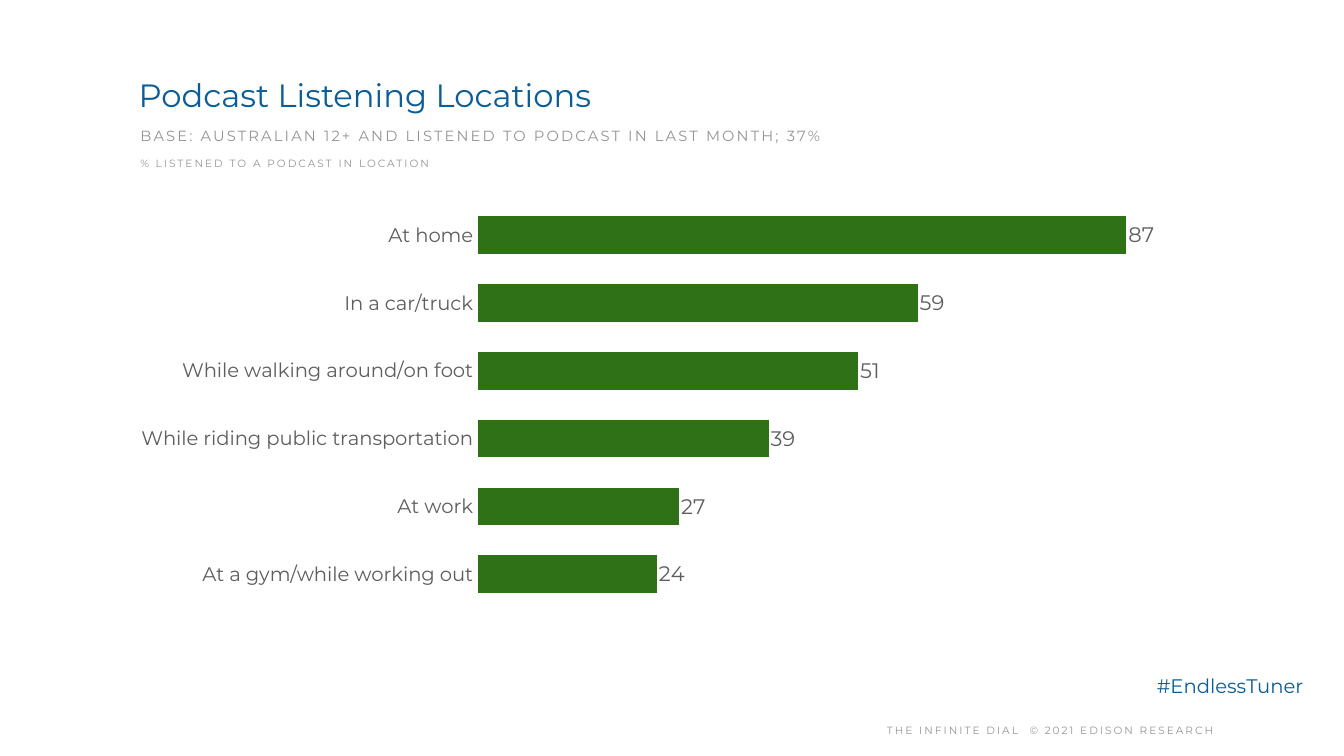
from pptx import Presentation
from pptx.chart.data import CategoryChartData
from pptx.dml.color import RGBColor
from pptx.enum.chart import XL_CHART_TYPE as ChartType
from pptx.enum.chart import XL_LABEL_POSITION as LabelPosition
from pptx.enum.chart import XL_TICK_LABEL_POSITION as TickLabelPosition
from pptx.enum.chart import XL_TICK_MARK as TickMark
from pptx.enum.text import MSO_ANCHOR as Anchor
from pptx.enum.text import PP_ALIGN as Align
from pptx.oxml import parse_xml
from pptx.oxml.ns import nsdecls
from pptx.util import Pt

FONT = "Montserrat"
BLUE = RGBColor(0x0A, 0x5D, 0x96)
GREEN = RGBColor(0x2E, 0x71, 0x16)
GRAY = RGBColor(0x95, 0x95, 0x95)
DARK_GRAY = RGBColor(0x5E, 0x5E, 0x5E)

INSET = 6
LISTENING_LOCATIONS = {
    "At home": 87,
    "In a car/truck": 59,
    "While walking around/on foot": 51,
    "While riding public transportation": 39,
    "At work": 27,
    "At a gym/while working out": 24,
}


def set_font(font, size, color):
    font.name = FONT
    font.size = Pt(size)
    font.color.rgb = color
    font.bold = False


def add_text(slide, text, box, size, color, anchor=Anchor.TOP,
             align=Align.LEFT, line_spacing=1.0, tracking=0):
    """Add a one-line text box; tracking is the letter spacing in points."""
    text_frame = slide.shapes.add_textbox(*map(Pt, box)).text_frame
    text_frame.word_wrap = True
    text_frame.vertical_anchor = anchor
    text_frame.margin_left = text_frame.margin_right = Pt(INSET)
    text_frame.margin_top = text_frame.margin_bottom = Pt(INSET)
    text_frame.text = text
    paragraph = text_frame.paragraphs[0]
    paragraph.alignment = align
    paragraph.line_spacing = line_spacing
    run = paragraph.runs[0]
    set_font(run.font, size, color)
    if tracking:
        run._r.get_or_add_rPr().set("spc", str(round(tracking * 100)))


def add_caption(slide, text, box, size, tracking, align=Align.LEFT):
    add_text(slide, text, box, size, GRAY, Anchor.MIDDLE, align, 1.2, tracking)


def set_plot_area(chart, x, y, width, height):
    """Fix the inner plot area, in fractions of the chart."""
    plot_area = chart._chartSpace.chart.plotArea
    for layout in plot_area.findall("{*}layout"):
        plot_area.remove(layout)
    plot_area.insert(0, parse_xml(
        f'<c:layout {nsdecls("c")}><c:manualLayout>'
        '<c:layoutTarget val="inner"/>'
        '<c:xMode val="edge"/><c:yMode val="edge"/>'
        f'<c:x val="{x}"/><c:y val="{y}"/>'
        f'<c:w val="{width}"/><c:h val="{height}"/>'
        '</c:manualLayout></c:layout>'))


def format_axes(chart):
    category_axis = chart.category_axis
    category_axis.reverse_order = True
    category_axis.major_tick_mark = TickMark.NONE
    category_axis.minor_tick_mark = TickMark.NONE
    category_axis.tick_label_position = TickLabelPosition.LOW
    category_axis.format.line.fill.background()
    set_font(category_axis.tick_labels.font, 28, DARK_GRAY)

    value_axis = chart.value_axis
    value_axis.minimum_scale = 0
    value_axis.maximum_scale = 100
    value_axis.major_unit = 20
    value_axis.has_major_gridlines = False
    value_axis.visible = False


def add_bar_chart(slide, values, box):
    chart_data = CategoryChartData(number_format="General")
    chart_data.categories = list(values)
    chart_data.add_series("Series 1", list(values.values()))
    chart = slide.shapes.add_chart(
        ChartType.BAR_CLUSTERED, *map(Pt, box), chart_data).chart
    chart.has_legend = False
    chart.has_title = False
    set_font(chart.font, 10, GRAY)
    format_axes(chart)

    plot = chart.plots[0]
    plot.vary_by_categories = False
    plot.gap_width = 80
    plot.overlap = -10
    series = plot.series[0]
    series.format.fill.solid()
    series.format.fill.fore_color.rgb = GREEN
    labels = series.data_labels
    labels.show_value = True
    labels.position = LabelPosition.OUTSIDE_END
    labels.number_format = "#,##0"
    labels.number_format_is_linked = False
    set_font(labels.font, 30, DARK_GRAY)
    set_plot_area(chart, 0.35, 0.041, 0.645, 0.911)


def main():
    presentation = Presentation()
    presentation.slide_width = Pt(1920)
    presentation.slide_height = Pt(1080)
    slide = presentation.slides.add_slide(presentation.slide_layouts[6])

    add_caption(slide, "THE INFINITE DIAL  © 2021 EDISON RESEARCH",
                (1076.4, 1023, 848, 38), 15, 2.9, Align.CENTER)
    add_text(slide, "#EndlessTuner", (1646.6, 954, 237, 49), 28, BLUE,
             line_spacing=1.1)
    add_text(slide, "Podcast Listening Locations",
             (192.2, 101.5, 1562, 88.5), 46, BLUE)
    add_caption(
        slide,
        "BASE: AUSTRALIAN 12+ AND LISTENED TO PODCAST IN LAST MONTH; 37%",
        (194.4, 172, 1623.6, 39.6), 21, 3.1)
    add_bar_chart(slide, LISTENING_LOCATIONS, (105, 261.4, 1651, 638))
    add_caption(slide, "% LISTENED TO A PODCAST IN LOCATION",
                (194.4, 214.6, 520, 33), 15, 2.9)

    presentation.save("out.pptx")


if __name__ == "__main__":
    main()
